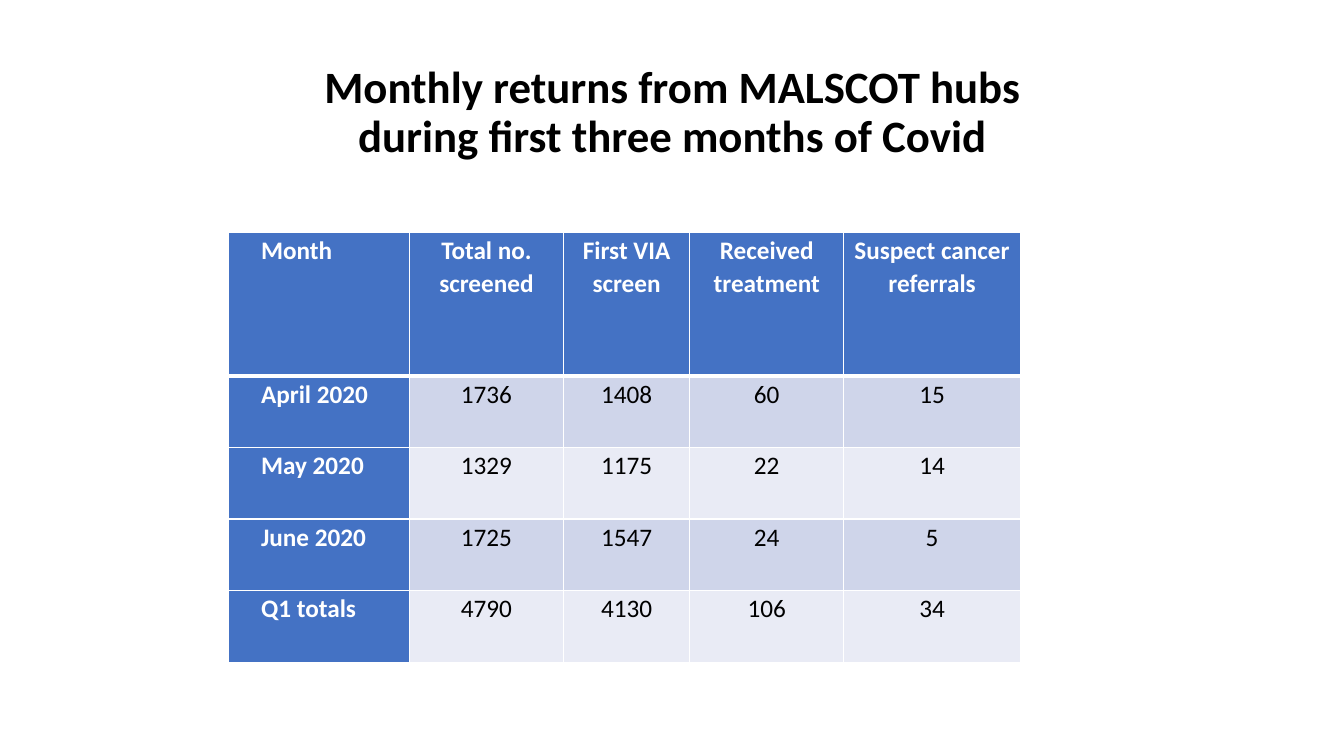
from dataclasses import dataclass

from lxml.etree import SubElement
from pptx import Presentation
from pptx.dml.color import RGBColor
from pptx.enum.text import MSO_ANCHOR, MSO_AUTO_SIZE, PP_ALIGN
from pptx.oxml.ns import qn
from pptx.util import Inches, Pt

TITLE = "Monthly returns from MALSCOT hubs\vduring first three months of Covid"
RETURNS = [
    ("Month", "Total no. screened", "First VIA screen", "Received treatment", "Suspect cancer referrals"),
    ("April 2020", "1736", "1408", "60", "15"),
    ("May 2020", "1329", "1175", "22", "14"),
    ("June 2020", "1725", "1547", "24", "5"),
    ("Q1 totals", "4790", "4130", "106", "34"),
]
SLIDE_SIZE = (13.33, 7.5)
TITLE_BOX = (0.92, 0.4, 11.5, 1.45)
TABLE_ORIGIN = (2.27, 2.31)
COLUMN_WIDTHS = (1.79, 1.53, 1.25, 1.53, 1.75)
ROW_HEIGHT = 0.71
ROW_UNITS = (2, 1, 1, 1, 1)


@dataclass(frozen=True)
class Theme:
    font: str = "Calibri"
    title_size: int = 32
    table_size: int = 18
    ink: str = "000000"
    paper: str = "FFFFFF"
    accent: str = "4472C4"
    bands: tuple = ("CFD5EA", "E9EBF5")
    rule: int = 1
    header_rule: int = 3


THEME = Theme()


def style(paragraph, size, color, bold, align, spacing):
    paragraph.alignment = align
    paragraph.line_spacing = spacing
    font = paragraph.font
    font.name, font.size, font.bold = THEME.font, Pt(size), bold
    font.color.rgb = RGBColor.from_string(color)


def add_border(cell, side, width):
    line = SubElement(cell._tc.get_or_add_tcPr(), qn(f"a:ln{side}"), w=str(Pt(width)))
    SubElement(SubElement(line, qn("a:solidFill")), qn("a:srgbClr"), val=THEME.paper)


def fill_cell(cell, text, row, column):
    heading = row == 0 or column == 0
    cell.margin_left = cell.margin_right = Inches(0.07)
    cell.margin_top, cell.margin_bottom = Inches(0.01), 0
    cell.vertical_anchor = MSO_ANCHOR.TOP
    for side in "LRTB":
        below_header = (row, side) in ((0, "B"), (1, "T"))
        add_border(cell, side, THEME.header_rule if below_header else THEME.rule)
    cell.fill.solid()
    cell.fill.fore_color.rgb = RGBColor.from_string(
        THEME.accent if heading else THEME.bands[(row - 1) % 2])
    cell.text = text
    paragraph = cell.text_frame.paragraphs[0]
    if column == 0:
        paragraph._p.get_or_add_pPr().set("marL", str(Inches(0.25)))
    paragraph.space_after = Pt(8)
    style(paragraph, THEME.table_size, THEME.paper if heading else THEME.ink, heading,
          PP_ALIGN.LEFT if column == 0 else PP_ALIGN.CENTER, 1.07)


def add_title(slide):
    title = slide.shapes.title
    title.left, title.top, title.width, title.height = map(Inches, TITLE_BOX)
    frame = title.text_frame
    frame.text = TITLE
    frame.word_wrap = True
    frame.auto_size = MSO_AUTO_SIZE.NONE
    frame.vertical_anchor = MSO_ANCHOR.MIDDLE
    style(frame.paragraphs[0], THEME.title_size, THEME.ink, True, PP_ALIGN.CENTER, 0.9)


def add_returns(slide):
    size = (sum(COLUMN_WIDTHS), sum(ROW_UNITS) * ROW_HEIGHT)
    table = slide.shapes.add_table(
        len(RETURNS), len(COLUMN_WIDTHS), *map(Inches, TABLE_ORIGIN + size)).table
    table.first_col = True
    for column, width in zip(table.columns, COLUMN_WIDTHS):
        column.width = Inches(width)
    for row, units in zip(table.rows, ROW_UNITS):
        row.height = Inches(units * ROW_HEIGHT)
    for r, values in enumerate(RETURNS):
        for c, value in enumerate(values):
            fill_cell(table.cell(r, c), value, r, c)


def main():
    deck = Presentation()
    deck.slide_width, deck.slide_height = map(Inches, SLIDE_SIZE)
    slide = deck.slides.add_slide(deck.slide_layouts.get_by_name("Title Only"))
    add_title(slide)
    add_returns(slide)
    deck.save("out.pptx")


if __name__ == "__main__":
    main()
